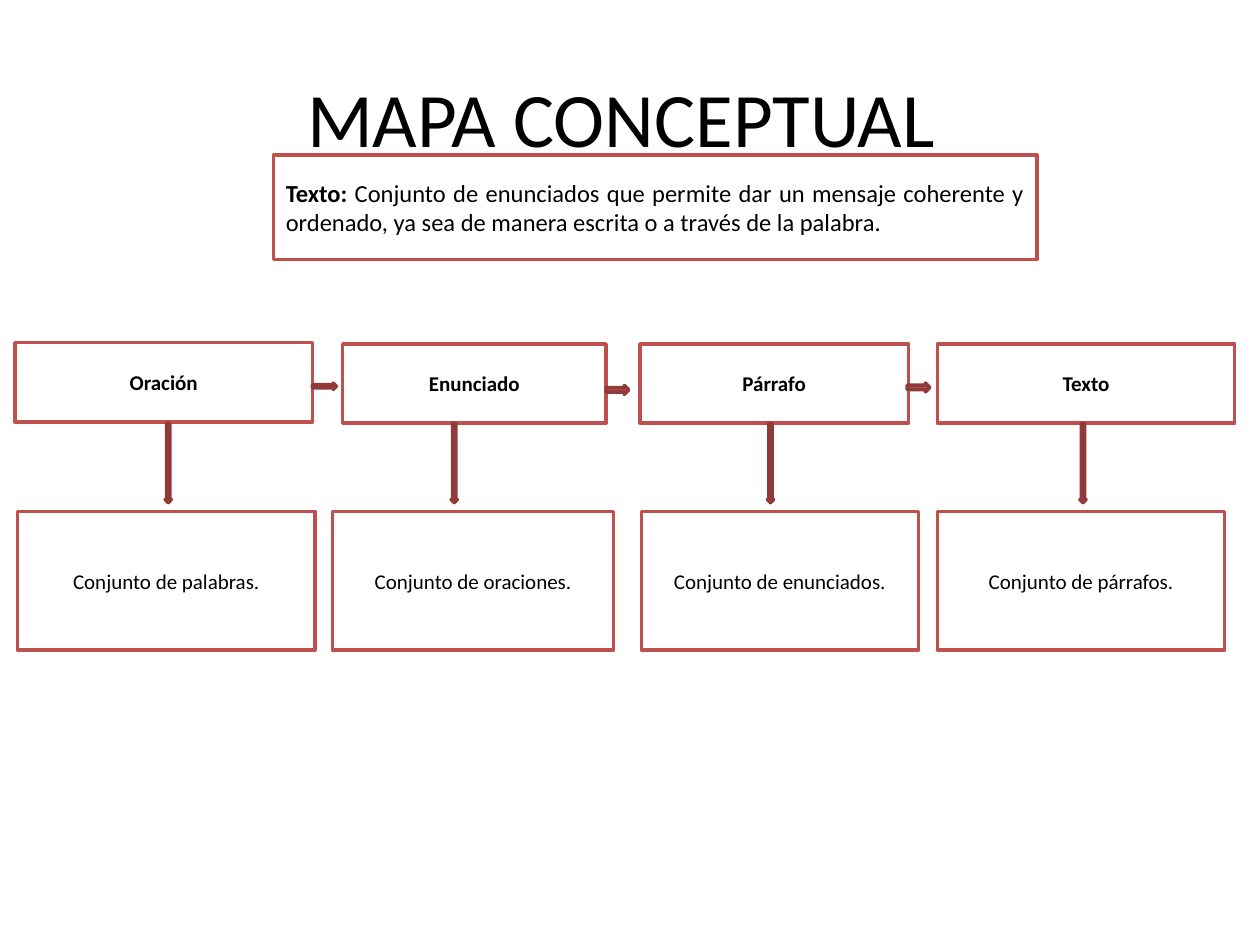
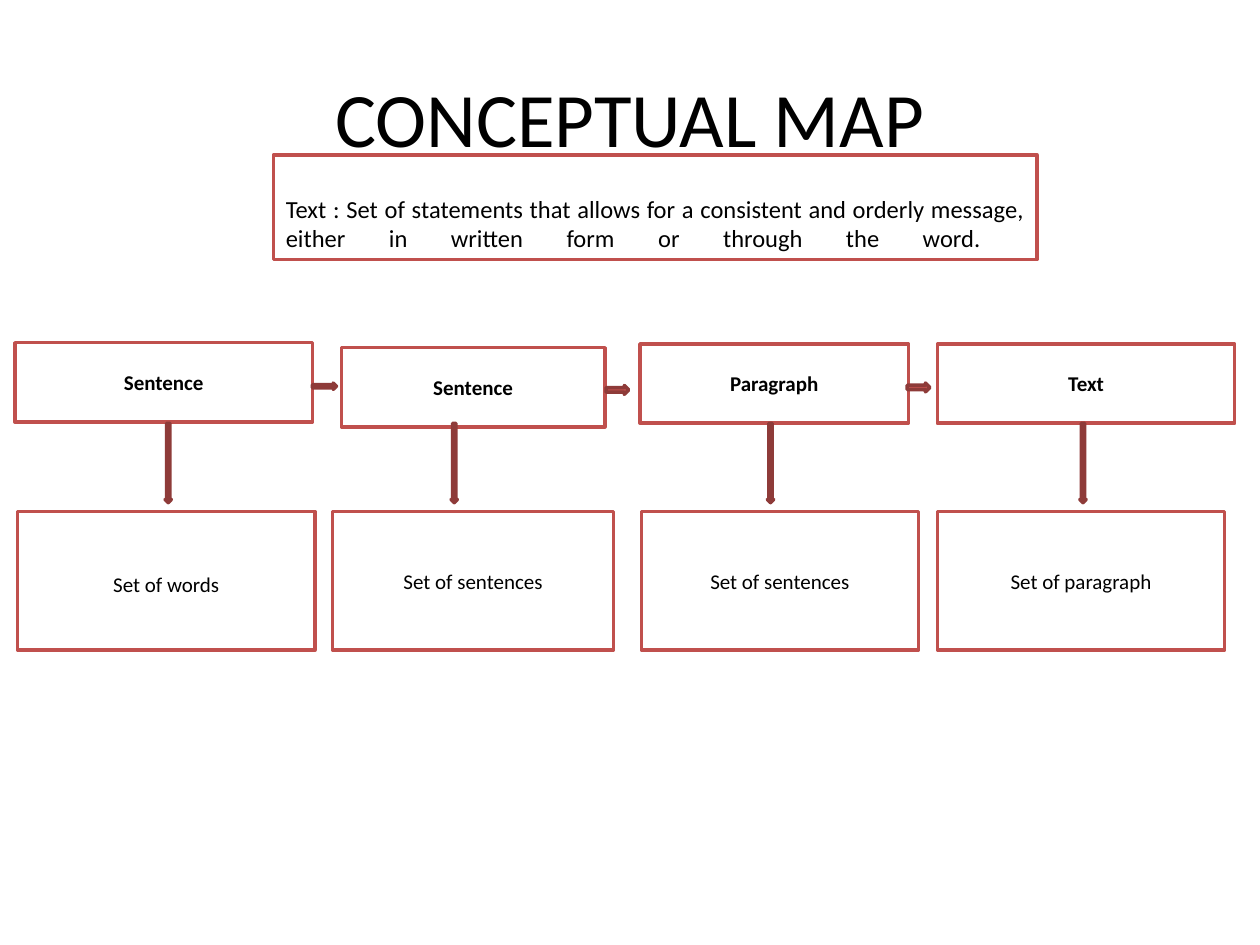
import pptx
import pptx.util
import pptx.dml.color
import pptx.enum.shapes
import pptx.enum.text

Inches = pptx.util.Inches
Pt = pptx.util.Pt
SHAPE = pptx.enum.shapes.MSO_SHAPE
ALIGN = pptx.enum.text.PP_ALIGN
ANCHOR = pptx.enum.text.MSO_ANCHOR

WHITE = pptx.dml.color.RGBColor(0xFF, 0xFF, 0xFF)
BLACK = pptx.dml.color.RGBColor(0x00, 0x00, 0x00)
RED = pptx.dml.color.RGBColor(0xC0, 0x50, 0x4D)
DARK_RED = pptx.dml.color.RGBColor(0x8E, 0x3B, 0x39)
FONT = "Calibri"

TERM_HEIGHT = 0.63
MEANING_TOP, MEANING_HEIGHT = 4.06, 1.1
MEANING_SPANS = [(0.14, 2.36), (2.64, 2.23), (5.09, 2.2), (7.44, 2.28)]
NEXT_ARROWS = [(2.48, 3.04, 0.19, 0.05), (4.81, 3.06, 0.18, 0.07), (7.2, 3.04, 0.18, 0.07)]
DOWN_ARROW_LEFTS = [1.02, 3.29, 5.8, 8.28]

SLIDES = [
    {
        "title": "MAPA CONCEPTUAL ",
        "definition": [
            ("Texto: ", True),
            ("Conjunto de enunciados que permite dar un mensaje coherente y ordenado, "
             "ya sea de manera escrita o a través de la palabra.", False),
        ],
        "definition_anchor": ANCHOR.MIDDLE,
        "definition_margin": 0.05,
        "terms": ["Oración", "Enunciado", "Párrafo", "Texto"],
        "second_term_at": (2.72, 2.73),
        "meanings": ["Conjunto de palabras.", "Conjunto de oraciones.",
                     "Conjunto de enunciados.", "Conjunto de párrafos."],
        "first_meaning_margin": 0.05,
    },
    {
        "title": "CONCEPTUAL MAP",
        "definition": [
            ("Text : Set of statements that allows for a consistent and orderly message, "
             "either in written form or through the word. ", False),
        ],
        "definition_anchor": ANCHOR.TOP,
        "definition_margin": 0.31,
        "terms": ["Sentence", "Sentence", "Paragraph", "Text"],
        "second_term_at": (2.71, 2.76),
        "meanings": ["Set of words", "Set of sentences", "Set of sentences", "Set of paragraph"],
        "first_meaning_margin": 0.1,
    },
]


def add_shape(s, kind, left, top, width, height, fill, line):
    sp = s.shapes.add_shape(kind, Inches(left), Inches(top), Inches(width), Inches(height))
    sp.shadow.inherit = False
    sp.fill.solid()
    sp.fill.fore_color.rgb = fill
    sp.line.color.rgb = line
    sp.line.width = Pt(2)
    return sp


def write(sp, runs, size, align=ALIGN.CENTER, anchor=ANCHOR.MIDDLE, margin_top=0.05):
    tf = sp.text_frame
    tf.word_wrap = True
    tf.vertical_anchor = anchor
    tf.margin_top = Inches(margin_top)
    p = tf.paragraphs[0]
    p.alignment = align
    for text, bold in runs:
        r = p.add_run()
        r.text = text
        r.font.name = FONT
        r.font.size = Pt(size)
        r.font.bold = bold
        r.font.color.rgb = BLACK
    return p


prs = pptx.Presentation()
prs.slide_width = Inches(10)
prs.slide_height = Inches(7.5)

for content in SLIDES:
    s = prs.slides.add_slide(prs.slide_layouts[6])

    title = s.shapes.add_textbox(Inches(0.5), Inches(0.3), Inches(9), Inches(1.25))
    write(title, [(content["title"], False)], 44)

    definition = add_shape(s, SHAPE.RECTANGLE, 2.17, 1.23, 6.06, 0.83, WHITE, RED)
    p = write(definition, content["definition"], 14, ALIGN.JUSTIFY,
              content["definition_anchor"], content["definition_margin"])
    if content["definition_anchor"] == ANCHOR.TOP:
        p.add_line_break()

    term_places = [(0.12, 2.72, 2.36), (*content["second_term_at"], 2.09),
                   (5.08, 2.73, 2.13), (7.44, 2.73, 2.36)]
    for term, (left, top, width) in zip(content["terms"], term_places):
        sp = add_shape(s, SHAPE.RECTANGLE, left, top, width, TERM_HEIGHT, WHITE, RED)
        write(sp, [(term, True)], 12)

    for left, top, width, height in NEXT_ARROWS:
        add_shape(s, SHAPE.RIGHT_ARROW, left, top, width, height, RED, DARK_RED)

    for i, (meaning, (left, width)) in enumerate(zip(content["meanings"], MEANING_SPANS)):
        sp = add_shape(s, SHAPE.RECTANGLE, left, MEANING_TOP, width, MEANING_HEIGHT, WHITE, RED)
        margin = content["first_meaning_margin"] if i == 0 else 0.05
        write(sp, [(meaning, False)], 12, margin_top=margin)

    for left in DOWN_ARROW_LEFTS:
        sp = add_shape(s, SHAPE.RIGHT_ARROW, left, 3.65, 0.63, 0.05, RED, DARK_RED)
        sp.rotation = 90

prs.save("out.pptx")
